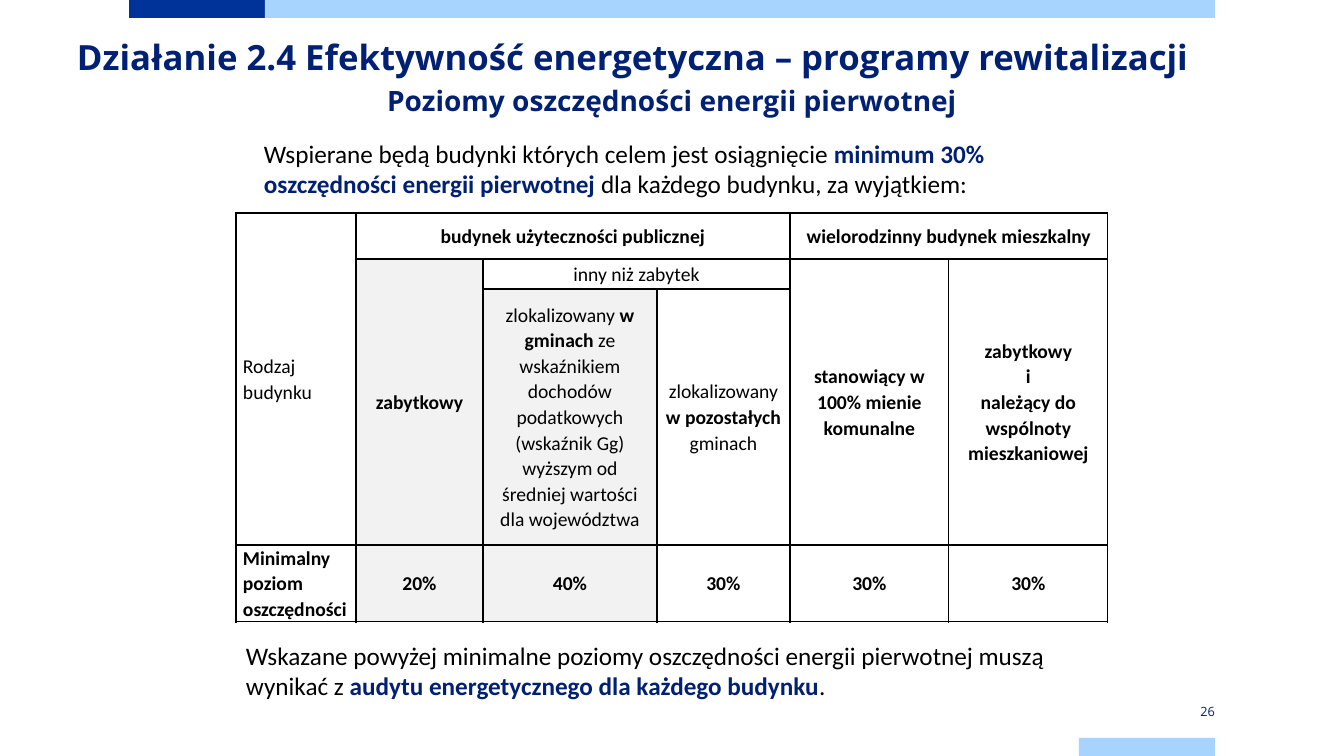
from lxml import etree
from pptx import Presentation
from pptx import util as u
from pptx.dml.color import RGBColor
from pptx.enum import shapes, text
from pptx.oxml.ns import qn

PX = 914400 / 100.8
COLORS = {"navy": "002073", "blue": "003399", "sky": "A6D3FF",
          "gray": "F2F2F2", "white": "FFFFFF", "black": "000000"}
LEFT, MID, RIGHT = text.PP_ALIGN.LEFT, text.PP_ALIGN.CENTER, text.PP_ALIGN.RIGHT
TOP, CENTER = text.MSO_ANCHOR.TOP, text.MSO_ANCHOR.MIDDLE


def px(n):
    return u.Emu(round(n * PX))


def rgb(name):
    return RGBColor.from_string(COLORS[name])


def write(frame, words, size=18, font="Calibri", color="black", strong=None,
          bold=False, align=LEFT, lead=None):
    """Fill a frame: a newline starts a paragraph, *stars* toggle bold."""
    frame.word_wrap = True
    for i, line in enumerate(words.split("\n")):
        para = frame.paragraphs[0] if i == 0 else frame.add_paragraph()
        para.alignment = align
        if lead:
            para.line_spacing = lead
        for j, part in enumerate(line.split("*")):
            if not part:
                continue
            run = para.add_run()
            run.text = part
            run.font.name, run.font.size = font, u.Pt(size)
            run.font.bold = bold or j % 2 == 1
            run.font.color.rgb = rgb(strong if strong and j % 2 else color)


def label(slide, box, words, pad=(0, 0), anchor=TOP, **fmt):
    frame = slide.shapes.add_textbox(*map(px, box)).text_frame
    frame.margin_left = frame.margin_right = px(pad[0])
    frame.margin_top = frame.margin_bottom = px(pad[1])
    frame.vertical_anchor = anchor
    write(frame, words, **fmt)


def bar(slide, box, color):
    rect = slide.shapes.add_shape(shapes.MSO_SHAPE.RECTANGLE, *map(px, box))
    rect.shadow.inherit = False
    rect.fill.solid()
    rect.fill.fore_color.rgb = rgb(color)
    rect.line.fill.background()


def frame_bars(slide, left, right, high):
    """Coloured strips at the top and bottom edges."""
    unit = 136
    bar(slide, (left, 0, unit, 18), "blue")
    bar(slide, (left + unit, 0, right - left - unit, 18), "sky")
    bar(slide, (right - unit, high - 18, unit, 18), "sky")
    label(slide, (right - unit, high - 54, unit, 18), "26", pad=(0, 8),
          anchor=CENTER, size=9.1, font="Open Sans", color="navy", align=RIGHT)


def heading(slide, left, top):
    style = dict(font="Open Sans", color="navy", bold=True)
    label(slide, (left, top, 1254, 51),
          "Działanie 2.4 Efektywność energetyczna – programy rewitalizacji",
          size=24.8, lead=u.Pt(32.7), **style)
    label(slide, (left + 188, top + 42, 814, 126),
          "Poziomy oszczędności energii pierwotnej",
          size=20, lead=u.Pt(30.8), align=MID, **style)


def edge(cell):
    props = cell._tc.get_or_add_tcPr()
    for side in ("lnL", "lnR", "lnT", "lnB"):
        line = etree.SubElement(props, qn(f"a:{side}"), w=str(u.Pt(1)))
        fill = etree.SubElement(line, qn("a:solidFill"))
        etree.SubElement(fill, qn("a:srgbClr"), val=COLORS["black"])


def levels(slide, left, top):
    """Table of minimum savings by type of building."""
    cols = (120, 127, 174, 133, 159, 159)
    rows = (46, 30, 256, 77)
    table = slide.shapes.add_table(len(rows), len(cols), px(left), px(top),
                                   px(sum(cols)), px(sum(rows))).table
    table.first_row = table.horz_banding = False
    for col, wide in zip(table.columns, cols):
        col.width = px(wide)
    for row, tall in zip(table.rows, rows):
        row.height = px(tall)

    # (row, column): words, row span, column span
    cells = {
        (0, 0): ("Rodzaj budynku", 3, 1),
        (0, 1): ("*budynek użyteczności publicznej*", 1, 3),
        (0, 4): ("*wielorodzinny budynek mieszkalny*", 1, 2),
        (1, 1): ("*zabytkowy*", 2, 1),
        (1, 2): ("inny niż zabytek", 1, 2),
        (1, 4): ("*stanowiący w 100% mienie komunalne*", 2, 1),
        (1, 5): ("*zabytkowy*\n*i*\n*należący do wspólnoty mieszkaniowej*", 2, 1),
        (2, 2): ("zlokalizowany *w gminach* ze wskaźnikiem dochodów podatkowych "
                 "(wskaźnik Gg) wyższym od średniej wartości dla województwa", 1, 1),
        (2, 3): ("zlokalizowany *w pozostałych* gminach", 1, 1),
        (3, 0): ("*Minimalny poziom oszczędności*", 1, 1),
    }
    for c, share in enumerate((20, 40, 30, 30, 30), 1):
        cells[3, c] = (f"*{share}%*", 1, 1)
    shaded = {(1, 1), (2, 1), (2, 2), (3, 1), (3, 2)}

    for r in range(len(rows)):
        for c in range(len(cols)):
            cell = table.cell(r, c)
            edge(cell)
            cell.fill.solid()
            cell.fill.fore_color.rgb = rgb("gray" if (r, c) in shaded else "white")
            cell.margin_left = cell.margin_right = px(7)
            cell.margin_top = cell.margin_bottom = 0
            cell.vertical_anchor = CENTER
    for (r, c), (words, down, across) in cells.items():
        cell = table.cell(r, c)
        if down * across > 1:
            cell.merge(table.cell(r + down - 1, c + across - 1))
        write(cell.text_frame, words, size=14, lead=1.07,
              align=MID if c else LEFT)
    table.cell(3, 0).vertical_anchor = TOP


def note(slide, box, words):
    label(slide, box, words, pad=(10, 5), strong="navy")


def main():
    deck = Presentation()
    deck.slide_width, deck.slide_height = px(1344), px(756)
    slide = deck.slides.add_slide(deck.slide_layouts[6])
    frame_bars(slide, 129, 1215, 756)
    heading(slide, 77, 32)
    note(slide, (254, 133, 814, 72),
         "Wspierane będą budynki których celem jest osiągnięcie *minimum 30% "
         "oszczędności energii pierwotnej* dla każdego budynku, za wyjątkiem:")
    levels(slide, 236, 213)
    note(slide, (236, 635, 871, 72),
         "Wskazane powyżej minimalne poziomy oszczędności energii pierwotnej "
         "muszą wynikać z *audytu energetycznego dla każdego budynku*.")
    deck.save("out.pptx")


if __name__ == "__main__":
    main()
